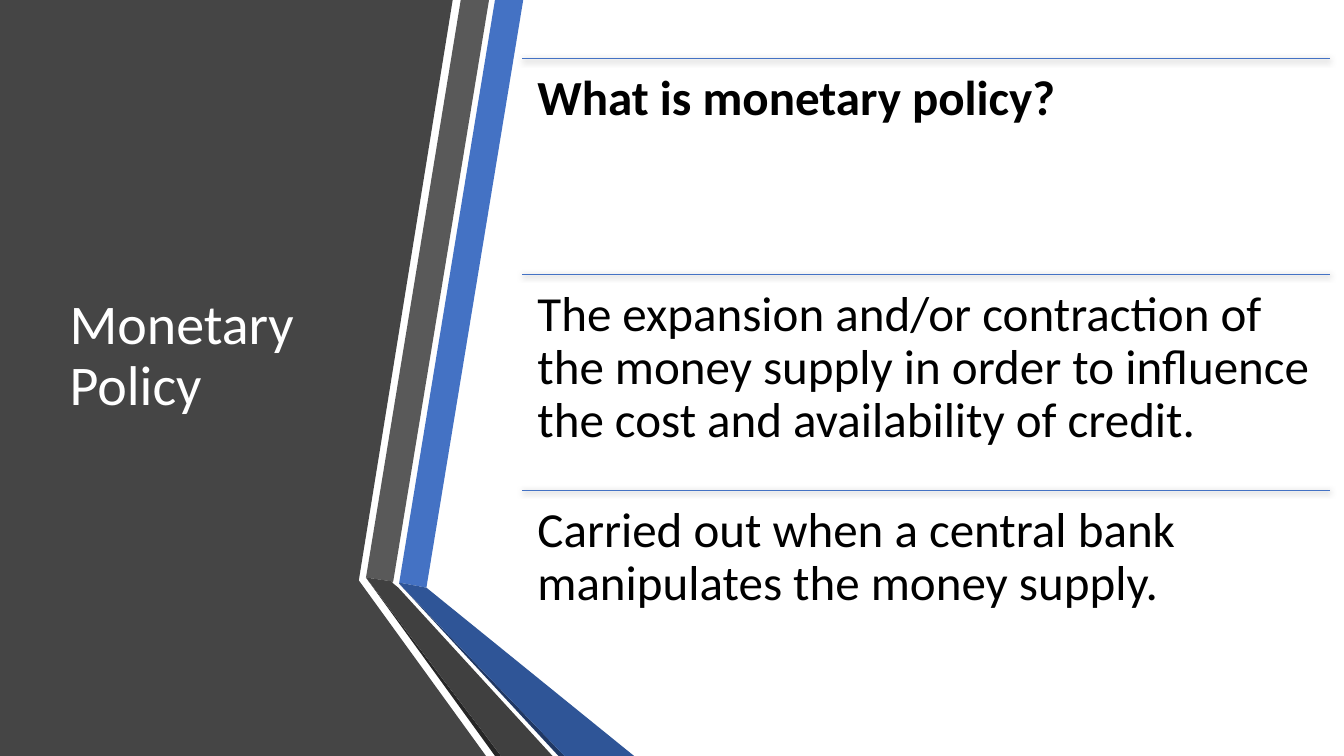
import dataclasses

import lxml.etree
import pptx
import pptx.dml.color
import pptx.enum.shapes
import pptx.enum.text
import pptx.oxml
import pptx.oxml.ns
import pptx.util

PX = 9144  # 100 px to the inch


@dataclasses.dataclass(frozen=True)
class Theme:
    font: str = "Calibri"
    title_size: int = 40
    point_size: int = 35
    line_spacing: float = 0.9
    paper: str = "FFFFFF"
    ink: str = "000000"
    panel: str = "454545"
    accent: str = "4472C4"
    accent_dark: str = "2F5597"
    accent_edge: str = "203864"
    gray: str = "595959"
    gray_dark: str = "404040"
    gray_edge: str = "262626"
    rule_width: float = 0.5


@dataclasses.dataclass(frozen=True)
class Box:
    left: int
    top: int
    width: int
    height: int

    def emu(self):
        return [pptx.util.Emu(side * PX) for side in dataclasses.astuple(self)]


THEME = Theme()
SLIDE_BOX = Box(0, 0, 1333, 750)

PANEL_OUTLINE = [(0, 0), (353, 0), (449, 0), (356, 575), (356, 576), (482, 750), (0, 750)]
RIBBON_FACETS = [
    (THEME.accent, [(396, 578), (423, 583), (519, 0), (491, 0)]),
    (THEME.gray, [(485, 0), (457, 0), (363, 573), (390, 577)]),
    (THEME.gray_edge, [(363, 573), (491, 750), (497, 750)]),
    (THEME.accent_edge, [(396, 579), (554, 750), (560, 750)]),
    (THEME.accent_dark, [(396, 579), (560, 750), (629, 750), (423, 583), (396, 578)]),
    (THEME.gray_dark, [(548, 750), (395, 583), (389, 578), (390, 577), (363, 573), (497, 750)]),
]
POINTS = [
    ("What is monetary policy?", True),
    ("The expansion and/or contraction of the money supply in order to "
     "influence the cost and availability of credit.", False),
    ("Carried out when a central bank manipulates the money supply.", False),
]


def rgb(color):
    return pptx.dml.color.RGBColor.from_string(color)


def add_facet(shapes, box, outline, color):
    builder = shapes.build_freeform(*outline[0], scale=PX)
    builder.add_line_segments(outline[1:], close=True)
    facet = builder.convert_to_shape(box.left * PX, box.top * PX)
    facet.shadow.inherit = False
    facet.fill.solid()
    facet.fill.fore_color.rgb = rgb(color)
    facet.line.fill.background()


def format_paragraph(paragraph, size, color, bold=False):
    paragraph.alignment = pptx.enum.text.PP_ALIGN.LEFT
    paragraph.line_spacing = THEME.line_spacing
    for run in paragraph.runs:
        run.font.name = THEME.font
        run.font.size = pptx.util.Pt(size)
        run.font.bold = bold
        run.font.color.rgb = rgb(color)


def add_backdrop(slide, box):
    """Draw the dark panel and the folded ribbon along its edge."""
    add_facet(slide.shapes, box, PANEL_OUTLINE, THEME.panel)
    ribbon = slide.shapes.add_group_shape()
    for color, outline in RIBBON_FACETS:
        add_facet(ribbon.shapes, box, outline, color)


def place_title(slide, box, wording):
    """Fill the title placeholder and bring it in front of the panel."""
    title = slide.shapes.title
    title.left, title.top, title.width, title.height = box.emu()
    frame = title.text_frame
    frame.text = wording
    frame.word_wrap = True
    frame.auto_size = pptx.enum.text.MSO_AUTO_SIZE.NONE
    frame.vertical_anchor = pptx.enum.text.MSO_ANCHOR.MIDDLE
    format_paragraph(frame.paragraphs[0], THEME.title_size, THEME.paper)
    title.element.getparent().append(title.element)


def add_soft_shadow(connector):
    effects = pptx.oxml.parse_xml(
        f'<a:effectLst {pptx.oxml.ns.nsdecls("a")}>'
        '<a:outerShdw blurRad="57150" dist="19050" dir="5400000" algn="ctr" rotWithShape="0">'
        '<a:srgbClr val="000000"><a:alpha val="63000"/></a:srgbClr>'
        '</a:outerShdw></a:effectLst>')
    connector.element.spPr.append(effects)


def add_point(shapes, box, wording, bold):
    """Add one ruled text block."""
    left, top, width, height = box.emu()
    rule = shapes.add_connector(
        pptx.enum.shapes.MSO_CONNECTOR.STRAIGHT, left, top, left + width, top)
    rule.line.color.rgb = rgb(THEME.accent)
    rule.line.width = pptx.util.Pt(THEME.rule_width)
    add_soft_shadow(rule)

    frame = shapes.add_textbox(left, top, width, height).text_frame
    frame.word_wrap = True
    inset = pptx.util.Emu(15 * PX)
    frame.margin_left = frame.margin_top = frame.margin_right = frame.margin_bottom = inset
    frame.text = wording
    format_paragraph(frame.paragraphs[0], THEME.point_size, THEME.ink, bold)


def add_points(slide, box, points):
    group = slide.shapes.add_group_shape()
    row_height = box.height // len(points)
    for row, (wording, bold) in enumerate(points):
        row_box = Box(box.left, box.top + row * row_height, box.width, row_height)
        add_point(group.shapes, row_box, wording, bold)


def build_topic_slide(presentation, box):
    slide = presentation.slides.add_slide(presentation.slide_layouts.get_by_name("Title Only"))
    slide.background.fill.solid()
    slide.background.fill.fore_color.rgb = rgb(THEME.paper)
    add_backdrop(slide, box)
    place_title(slide, Box(box.left + 59, box.top + 75, 304, 558), "Monetary Policy")
    add_points(slide, Box(box.left + 518, box.top + 58, 801, 642), POINTS)


def main():
    presentation = pptx.Presentation()
    _, _, presentation.slide_width, presentation.slide_height = SLIDE_BOX.emu()
    build_topic_slide(presentation, SLIDE_BOX)
    presentation.save("out.pptx")


if __name__ == "__main__":
    main()
